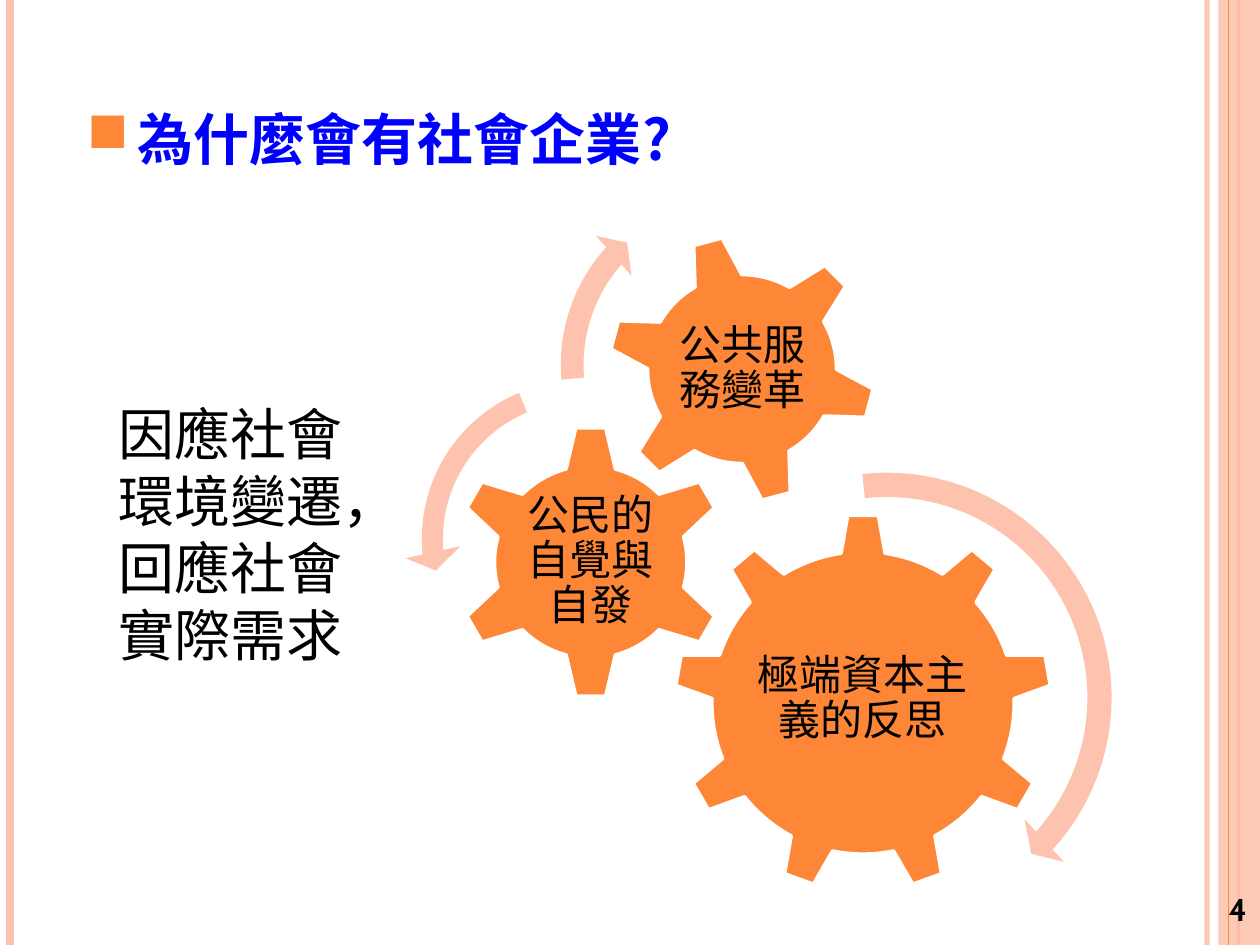
from dataclasses import dataclass, field
from typing import Any, Optional

from lxml.etree import SubElement
from pptx import Presentation
from pptx.dml.color import RGBColor
from pptx.enum.shapes import MSO_CONNECTOR, MSO_SHAPE
from pptx.enum.text import MSO_ANCHOR, PP_ALIGN
from pptx.oxml.ns import qn
from pptx.util import Cm, Pt

ORANGE = RGBColor(0xFE, 0x86, 0x37)
PEACH = RGBColor(0xFE, 0xC3, 0xAE)
WHITE = RGBColor(0xFF, 0xFF, 0xFF)
BLACK = RGBColor(0x00, 0x00, 0x00)
BLUE = RGBColor(0x00, 0x00, 0xFF)

CHINESE_FONT = "Noto Sans CJK SC"
NUMBER_FONT = "Cabin"
SLIDE_WIDTH, SLIDE_HEIGHT = 25.4, 19.05

LABEL_FRAME = {
    "vertical_anchor": MSO_ANCHOR.MIDDLE,
    "margin_left": Cm(0.08),
    "margin_right": Cm(0.08),
    "margin_top": Cm(0.08),
    "margin_bottom": Cm(0.08),
}
LABEL_PARAGRAPH = {"alignment": PP_ALIGN.CENTER, "line_spacing": 0.9}


@dataclass
class Box:
    left: float
    top: float
    width: float
    height: float

    def lengths(self) -> tuple:
        return Cm(self.left), Cm(self.top), Cm(self.width), Cm(self.height)


@dataclass
class Stripe:
    x: float
    color: RGBColor
    weight: float
    opacity: int = 100


@dataclass
class TextItem:
    text: str
    box: Box
    size: float
    font: str = CHINESE_FONT
    color: RGBColor = BLACK
    bold: bool = False
    frame: dict = field(default_factory=dict)
    paragraph: dict = field(default_factory=dict)
    bullet: Optional[str] = None


@dataclass
class Gear:
    kind: MSO_SHAPE
    left: float
    top: float
    size: float
    rotation: float
    text: str
    label_box: Box


@dataclass
class Arrow:
    kind: MSO_SHAPE
    left: float
    top: float
    size: float
    adjustments: tuple


STRIPES = [
    Stripe(24.33, PEACH, 3, 93),
    Stripe(0.2, PEACH, 4.5),
    Stripe(24.97, ORANGE, 1.5),
]
INNER_STRIPE = Stripe(24.77, ORANGE, 0.75)
SIDE_BAND = Box(24.56, 0, 0.84, SLIDE_HEIGHT)

GEARS = [
    Gear(MSO_SHAPE.GEAR_9, 13.59, 10.36, 7.62, 0, "極端資本主義的反思",
         Box(15.11, 12.14, 4.55, 3.91)),
    Gear(MSO_SHAPE.GEAR_6, 9.14, 8.56, 5.54, 0, "公民的自覺與自發",
         Box(10.54, 9.96, 2.74, 2.74)),
    Gear(MSO_SHAPE.GEAR_6, 12.24, 4.72, 5.44, 345, "公共服務變革",
         Box(13.44, 5.92, 3.05, 3.05)),
]
ARROWS = [
    Arrow(MSO_SHAPE.CIRCULAR_ARROW, 13, 9.19, 9.75, (0.05, 2.99, 25.32, 158.27, 0.06)),
    Arrow(MSO_SHAPE.LEFT_CIRCULAR_ARROW, 8.15, 7.32, 7.09, (0.06, 4.3, 104.89, 148.38, 0.08)),
    Arrow(MSO_SHAPE.CIRCULAR_ARROW, 11, 3.53, 7.65, (0.06, 3.94, 133.14, 105.08, 0.07)),
]
TEXTS = [
    TextItem("4", Box(24.1, 17.6, 1.7, 1.45), 18, NUMBER_FONT, bold=True,
             frame={"vertical_anchor": MSO_ANCHOR.MIDDLE},
             paragraph={"alignment": PP_ALIGN.CENTER}),
    TextItem("因應社會環境變遷，回應社會實際需求", Box(2.13, 7.92, 5.99, 5.74), 32),
    TextItem("為什麼會有社會企業?", Box(1.5, 2.13, 12.8, 1.6), 32, color=BLUE, bold=True,
             paragraph={"alignment": PP_ALIGN.JUSTIFY, "line_spacing": 0.9}, bullet="■"),
]


def apply_format(target: Any, values: dict) -> None:
    for name, value in values.items():
        setattr(target, name, value)


def set_opacity(fill: Any, percent: int) -> None:
    color = fill._xPr.find(qn("a:solidFill"))[0]
    SubElement(color, qn("a:alpha"), val=str(percent * 1000))


def draw_shape(slide: Any, kind: MSO_SHAPE, box: Box, color: RGBColor) -> Any:
    shape = slide.shapes.add_shape(kind, *box.lengths())
    shape.shadow.inherit = False
    shape.fill.solid()
    shape.fill.fore_color.rgb = color
    shape.line.fill.background()
    return shape


def draw_stripe(slide: Any, stripe: Stripe) -> None:
    line = slide.shapes.add_connector(
        MSO_CONNECTOR.STRAIGHT, Cm(stripe.x), Cm(0), Cm(stripe.x), Cm(SLIDE_HEIGHT))
    line.line.color.rgb = stripe.color
    line.line.width = Pt(stripe.weight)
    if stripe.opacity < 100:
        set_opacity(line.line.fill, stripe.opacity)
    SubElement(line._element.spPr, qn("a:effectLst"))


def add_bullet(paragraph: Any, character: str) -> None:
    properties = paragraph._p.get_or_add_pPr()
    properties.set("marL", str(Cm(1.02)))
    properties.set("indent", str(-Cm(1.02)))
    bullet_color = SubElement(properties, qn("a:buClr"))
    SubElement(bullet_color, qn("a:srgbClr"), val=str(ORANGE))
    SubElement(properties, qn("a:buChar"), char=character)


def draw_text(slide: Any, item: TextItem) -> None:
    frame = slide.shapes.add_textbox(*item.box.lengths()).text_frame
    apply_format(frame, {"word_wrap": True, **item.frame})
    paragraph = frame.paragraphs[0]
    apply_format(paragraph, item.paragraph)
    if item.bullet:
        add_bullet(paragraph, item.bullet)
    run = paragraph.add_run()
    run.text = item.text
    apply_format(run.font, {"size": Pt(item.size), "bold": item.bold, "name": item.font})
    run.font.color.rgb = item.color
    SubElement(run._r.get_or_add_rPr(), qn("a:ea"), typeface=item.font)


def draw_gear(slide: Any, gear: Gear) -> None:
    shape = draw_shape(slide, gear.kind, Box(gear.left, gear.top, gear.size, gear.size), ORANGE)
    shape.rotation = gear.rotation
    shape.line.color.rgb = WHITE
    shape.line.width = Pt(2)
    draw_text(slide, TextItem(gear.text, gear.label_box, 24,
                              frame=LABEL_FRAME, paragraph=LABEL_PARAGRAPH))


def draw_arrow(slide: Any, arrow: Arrow) -> None:
    box = Box(arrow.left, arrow.top, arrow.size, arrow.size)
    shape = draw_shape(slide, arrow.kind, box, PEACH)
    for index, value in enumerate(arrow.adjustments):
        shape.adjustments[index] = value


def main() -> None:
    presentation = Presentation()
    apply_format(presentation, {"slide_width": Cm(SLIDE_WIDTH), "slide_height": Cm(SLIDE_HEIGHT)})
    slide = presentation.slides.add_slide(presentation.slide_layouts[6])
    for stripe in STRIPES:
        draw_stripe(slide, stripe)
    set_opacity(draw_shape(slide, MSO_SHAPE.RECTANGLE, SIDE_BAND, PEACH).fill, 87)
    draw_stripe(slide, INNER_STRIPE)
    for gear in GEARS:
        draw_gear(slide, gear)
    for arrow in ARROWS:
        draw_arrow(slide, arrow)
    for item in TEXTS:
        draw_text(slide, item)
    presentation.save("out.pptx")


if __name__ == "__main__":
    main()
